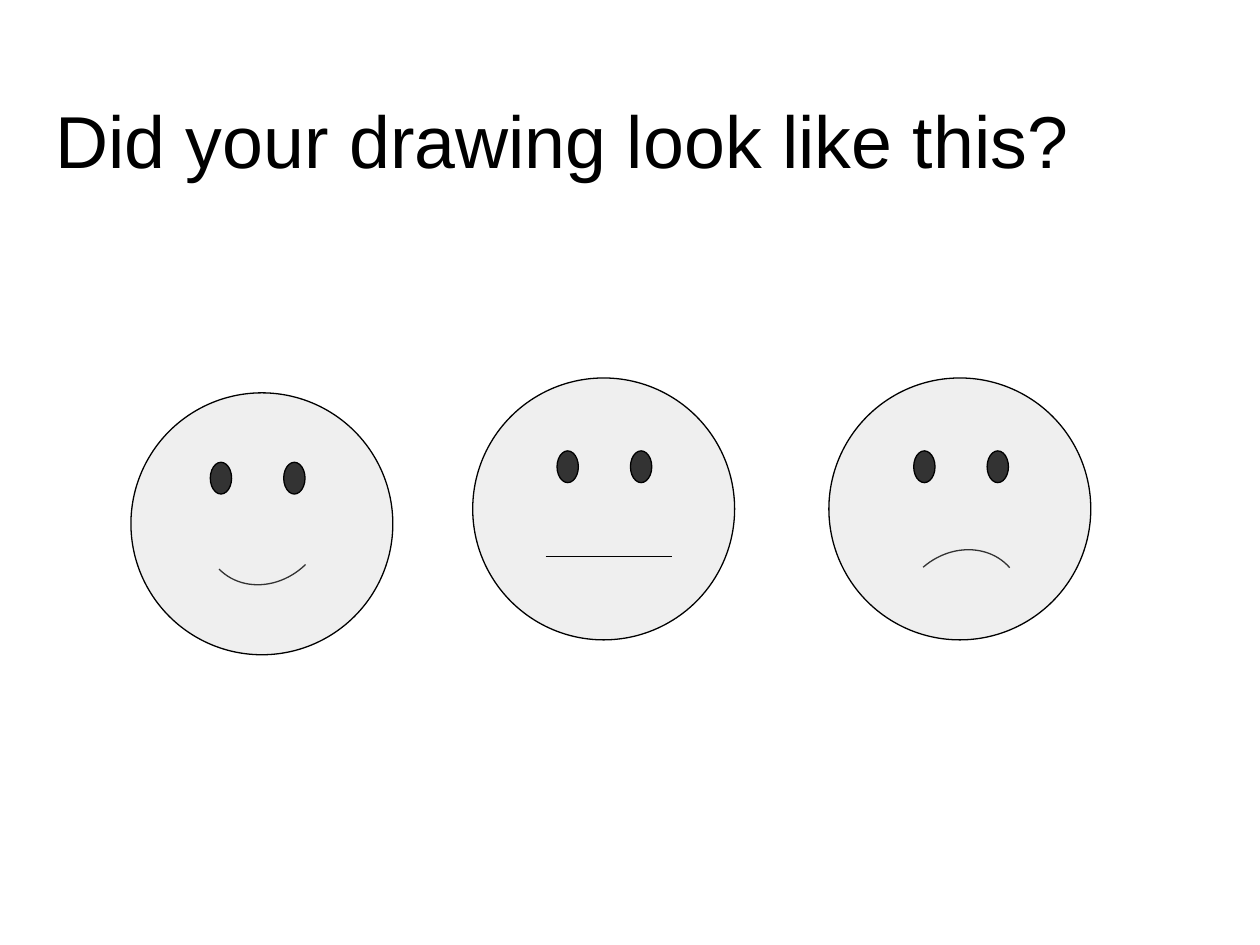
from lxml.etree import SubElement
from pptx import Presentation
from pptx.dml.color import RGBColor
from pptx.enum.shapes import MSO_CONNECTOR, MSO_SHAPE
from pptx.enum.text import MSO_ANCHOR, PP_ALIGN
from pptx.oxml.ns import qn
from pptx.util import Cm, Pt


def color(hex_string):
    return RGBColor.from_string(hex_string)


def add_outlined(kind, left, top, width, height, fill=None, line="000000"):
    """Add a thinly outlined preset shape, measured in centimetres."""
    shape = slide.shapes.add_shape(kind, Cm(left), Cm(top), Cm(width), Cm(height))
    shape.shadow.inherit = False
    if fill:
        shape.fill.solid()
        shape.fill.fore_color.rgb = color(fill)
    else:
        shape.fill.background()
    shape.line.color.rgb = color(line)
    shape.line.width = Pt(0.75)
    return shape


presentation = Presentation()
presentation.slide_width, presentation.slide_height = Cm(25.4), Cm(19.05)
slide = presentation.slides.add_slide(presentation.slide_layouts[5])
slide.background.fill.solid()
slide.background.fill.fore_color.rgb = color("FFFFFF")

title = slide.shapes.title
title.left, title.top, title.width, title.height = Cm(0.86), Cm(1.65), Cm(23.67), Cm(2.31)
title.text_frame.vertical_anchor = MSO_ANCHOR.MIDDLE
paragraph = title.text_frame.paragraphs[0]
paragraph.alignment = PP_ALIGN.LEFT
run = paragraph.add_run()
run.text = "Did your drawing look like this?"
run.font.name = "Arial"
run.font.size = Pt(42)
run.font.color.rgb = color("000000")

# Face left and top, then left eye left and top
FACES = [
    (2.64, 7.92, 4.24, 9.32),  # happy
    (9.53, 7.62, 11.23, 9.09),  # neutral
    (16.71, 7.62, 18.42, 9.09),  # sad
]
FACE_SIZE = 5.28
EYE_STEP = 1.48
for face_left, face_top, eye_left, eye_top in FACES:
    add_outlined(MSO_SHAPE.OVAL, face_left, face_top, FACE_SIZE, FACE_SIZE, "EFEFEF")
    for side in range(2):
        add_outlined(MSO_SHAPE.OVAL, eye_left + side * EYE_STEP, eye_top, 0.43, 0.64, "333333")

neutral_mouth = slide.shapes.add_connector(
    MSO_CONNECTOR.STRAIGHT, Cm(11), Cm(11.22), Cm(13.54), Cm(11.22))
neutral_mouth.line.color.rgb = color("000000")
neutral_mouth.line.width = Pt(0.75)
SubElement(neutral_mouth._element.spPr, qn("a:effectLst"))

for left, top, rotation in [(4.04, 9.4, 135.6), (18.06, 11.15, 318.9)]:
    mouth = add_outlined(MSO_SHAPE.ARC, left, top, 2.62, 2.31, line="323232")
    mouth.rotation = rotation

presentation.save("out.pptx")
